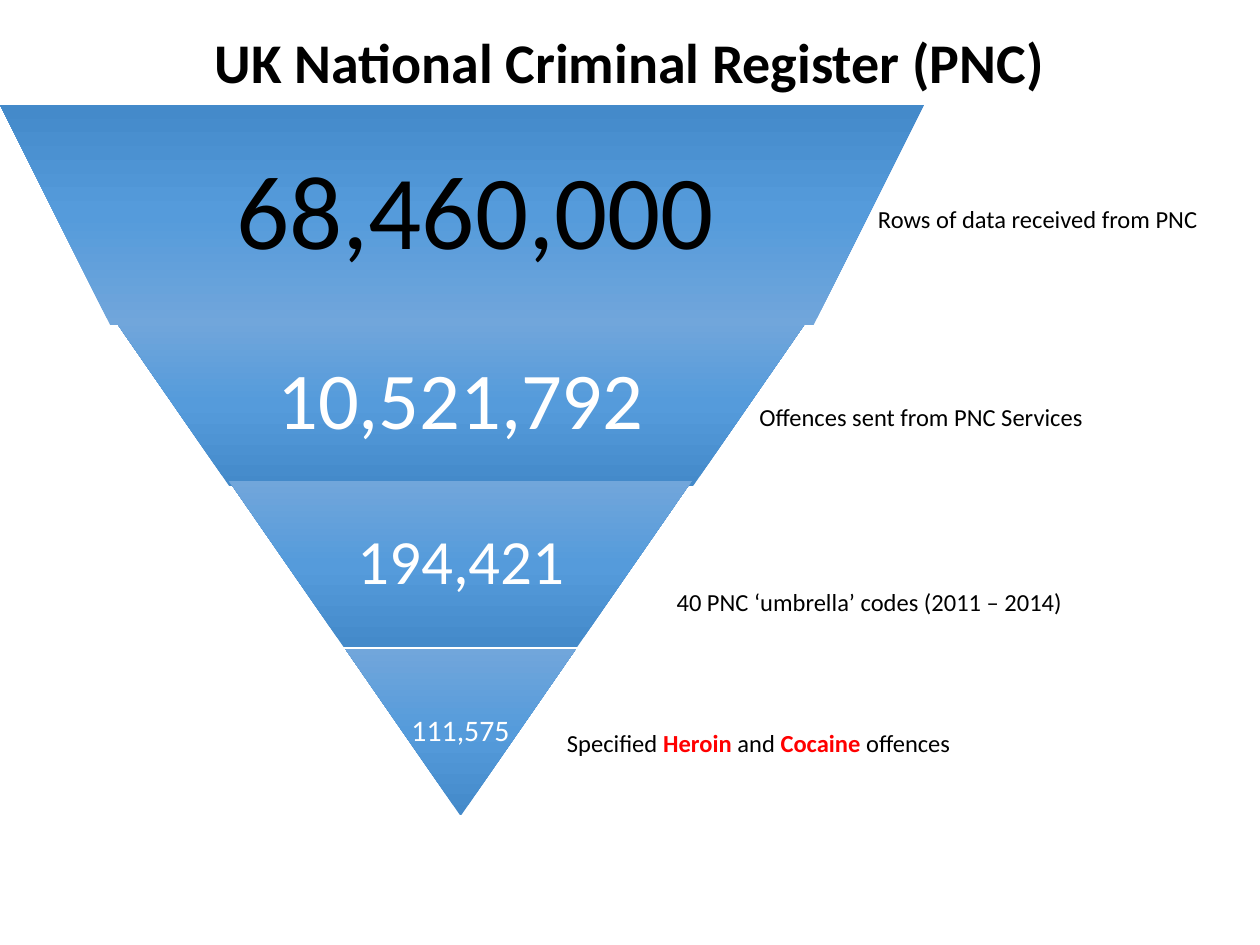
import copy
from dataclasses import dataclass

import pptx
import pptx.dml.color
import pptx.enum.shapes
import pptx.enum.text
import pptx.util

Cm = pptx.util.Cm
Pt = pptx.util.Pt
ALIGN = pptx.enum.text.PP_ALIGN
ANCHOR = pptx.enum.text.MSO_ANCHOR


@dataclass(frozen=True)
class Theme:
    font: str = "Calibri"
    black: str = "000000"
    white: str = "FFFFFF"
    accent: str = "FF0000"
    gradient: tuple = ("71A6DB", "559BDB", "448ACA")
    title_size: int = 32
    label_size: int = 14


def set_values(target, values):
    for name, value in values.items():
        setattr(target, name, value)


class FunnelSlide:
    def __init__(self, presentation, theme):
        self.theme = theme
        self.slide = presentation.slides.add_slide(presentation.slide_layouts[6])

    def text(self, box, runs, size, inset=None, **paragraph_format):
        """Add a text box; runs are (text, colour, bold)."""
        shape = self.slide.shapes.add_textbox(*map(Cm, box))
        frame = shape.text_frame
        frame.word_wrap = True
        if paragraph_format:
            frame.vertical_anchor = ANCHOR.MIDDLE
        if inset is not None:
            sides = ("left", "top", "right", "bottom")
            set_values(frame, {f"margin_{side}": Cm(inset) for side in sides})
        paragraph = frame.paragraphs[0]
        set_values(paragraph, paragraph_format)
        for text, colour, bold in runs:
            run = paragraph.add_run()
            run.text = text
            set_values(run.font, {"name": self.theme.font, "size": Pt(size), "bold": bold})
            run.font.color.rgb = pptx.dml.color.RGBColor.from_string(colour)

    def centred(self, box, text, size, colour, bold=False, inset=None):
        self.text(box, [(text, colour, bold)], size, inset,
                  alignment=ALIGN.CENTER, line_spacing=0.9)

    def label(self, left, top, width, *runs):
        self.text((left, top, width, 0.86), runs, self.theme.label_size)

    def band(self, box, slant, dark_top=False):
        """Add an upside-down trapezoid with a three-stop gradient."""
        shape = self.slide.shapes.add_shape(
            pptx.enum.shapes.MSO_SHAPE.TRAPEZOID, *map(Cm, box))
        shape.rotation = 180
        shape.adjustments[0] = slant
        shape.shadow.inherit = False
        shape.line.fill.background()
        shape.fill.gradient()
        shape.fill.gradient_angle = 270
        stop_list = shape._element.spPr.xpath(".//a:gsLst")[0]
        stop_list.insert(1, copy.deepcopy(stop_list[0]))
        # The half turn of the shape also turns its gradient
        colours = self.theme.gradient if dark_top else self.theme.gradient[::-1]
        for index, (stop, colour) in enumerate(zip(shape.fill.gradient_stops, colours)):
            stop.position = index / 2
            stop.color.rgb = pptx.dml.color.RGBColor.from_string(colour)


def main():
    theme = Theme()
    presentation = pptx.Presentation()
    set_values(presentation, {"slide_width": Cm(25.4), "slide_height": Cm(19.05)})
    funnel = FunnelSlide(presentation, theme)

    # Title
    funnel.centred((1.75, 0.33, 21.9, 1.96), "UK National Criminal Register (PNC)",
                   theme.title_size, theme.black, bold=True)

    # Funnel bands: left, top, width, height, slant, text left, text width,
    # figure, size, colour, inset; the widest band lies in front
    bands = (
        (2.31, 6.45, 13.97, 3.35, 0.69, 4.75, 9.07, "10,521,792", 46, theme.white, 0.15),
        (4.62, 9.7, 9.32, 3.35, 0.69, 6.27, 6.05, "194,421", 36, theme.white, 0.13),
        (6.96, 13.08, 4.65, 3.35, 0.69, 6.96, 4.65, "111,575", 17, theme.white, 0.05),
        (0, 2.11, 18.62, 4.45, 0.5, 3.73, 11.71, "68,460,000", 60, theme.black, 0.15),
    )
    for (left, top, width, height, slant, text_left, text_width,
         figure, size, colour, inset) in bands:
        funnel.band((left, top, width, height), slant, dark_top=left == 0)
        funnel.centred((text_left, top, text_width, height), figure, size, colour,
                       inset=inset)

    # Labels beside the bands
    labels = (
        (17.45, 3.99, 7.95, "Rows of data received from PNC"),
        (15.06, 7.98, 10.49, "Offences sent from PNC Services"),
        (13.39, 11.71, 9.7, "40 PNC ‘umbrella’ codes (2011 – 2014)"),
    )
    for left, top, width, text in labels:
        funnel.label(left, top, width, (text, theme.black, False))
    funnel.label(11.18, 14.55, 10.21,
                 ("Specified ", theme.black, False), ("Heroin ", theme.accent, True),
                 ("and ", theme.black, False), ("Cocaine ", theme.accent, True),
                 ("offences", theme.black, False))

    presentation.save("out.pptx")


if __name__ == "__main__":
    main()
